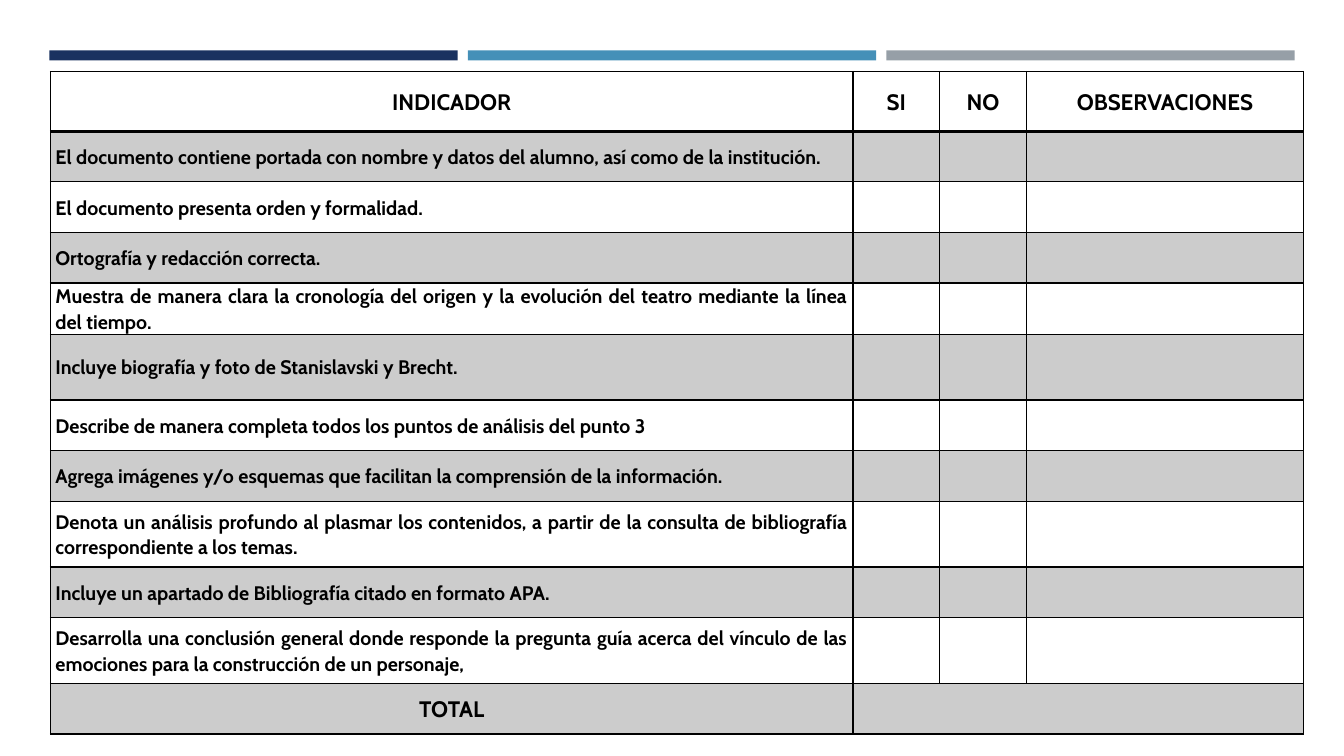
from lxml.etree import SubElement
from pptx import Presentation
from pptx.dml.color import RGBColor
from pptx.enum.shapes import MSO_SHAPE as Shape
from pptx.enum.text import MSO_ANCHOR as Anchor, PP_ALIGN as Align
from pptx.oxml import parse_xml
from pptx.oxml.ns import nsdecls, qn
from pptx.util import Inches, Pt

BLACK = RGBColor(0x00, 0x00, 0x00)
NAVY = RGBColor(0x1A, 0x32, 0x60)
BLUE = RGBColor(0x45, 0x90, 0xB8)
GRAY = RGBColor(0x96, 0x9F, 0xA7)

HEAD = ["INDICADOR", "SI", "NO", "OBSERVACIONES"]
ITEMS = [
    "El documento contiene portada con nombre y datos del alumno, así como de la institución.",
    "El documento presenta orden y formalidad.",
    "Ortografía y redacción correcta.",
    "Muestra de manera clara la cronología del origen y la evolución del teatro"
    " mediante la línea del tiempo.",
    "Incluye biografía y foto de Stanislavski y Brecht.",
    "Describe de manera completa todos los puntos de análisis del punto 3",
    "Agrega imágenes y/o esquemas que facilitan la comprensión de la información.",
    "Denota un análisis profundo al plasmar los contenidos, a partir de la consulta"
    " de bibliografía correspondiente a los temas.",
    "Incluye un apartado de Bibliografía citado en formato APA.",
    "Desarrolla una conclusión general donde responde la pregunta guía acerca"
    " del vínculo de las emociones para la construcción de un personaje,",
]
ROWS = [HEAD] + [[item, "", "", ""] for item in ITEMS] + [["TOTAL", "", "", ""]]
LAST = len(ROWS) - 1
TALL = {0: 0.59, 5: 0.65, 8: 0.65, 10: 0.65}
SHARES = [TALL.get(row, 0.5) for row in range(len(ROWS))]
COLS = [7.96, 0.86, 0.86, 2.75]
LEFT, TOP, HIGH = 0.5, 0.71, 6.57
BARS = [NAVY, BLUE, GRAY]
BAR_LEFT, BAR_TOP, BAR_WIDE, BAR_HIGH, STEP = 0.49, 0.5, 4.05, 0.1, 4.15
CELL = dict(margin_left=Inches(0.05), margin_right=Inches(0.05),
            margin_top=0, margin_bottom=0, vertical_anchor=Anchor.MIDDLE)


def style(thing, form):
    for name, value in form.items():
        setattr(thing, name, value)


def add_bars(slide):
    for num, color in enumerate(BARS):
        bar = slide.shapes.add_shape(
            Shape.RECTANGLE, Inches(BAR_LEFT + num * STEP), Inches(BAR_TOP),
            Inches(BAR_WIDE), Inches(BAR_HIGH))
        bar.shadow.inherit = False
        bar.fill.solid()
        bar.fill.fore_color.rgb = color
        bar.line.fill.background()


def shade(cell):
    """Fill the cell with black at 20% opacity."""
    cell.fill.solid()
    cell.fill.fore_color.rgb = BLACK
    color = cell._tc.tcPr.find(".//" + qn("a:srgbClr"))
    SubElement(color, qn("a:alpha"), val="20000")


def rule(cell, base):
    """Border all four sides; base is the width of the bottom one."""
    props = cell._tc.get_or_add_tcPr()
    for place, (side, width) in enumerate(zip("LRTB", (1, 1, 1, base))):
        props.insert(place, parse_xml(
            f'<a:ln{side} {nsdecls("a")} w="{Pt(width)}"><a:solidFill>'
            f'<a:srgbClr val="{BLACK}"/></a:solidFill></a:ln{side}>'))


def write(cell, text, main):
    """Set the text, larger and centred where main is true."""
    para = cell.text_frame.paragraphs[0]
    style(para, dict(alignment=Align.CENTER if main else Align.JUSTIFY, line_spacing=1.07))
    font = dict(name="Cabin", size=Pt(16 if main else 14), bold=True)
    style(para.font, font)
    if text:
        run = para.add_run()
        run.text = text
        style(run.font, font)
        run.font.color.rgb = BLACK


def add_grid(slide):
    table = slide.shapes.add_table(
        len(ROWS), len(COLS), Inches(LEFT), Inches(TOP),
        Inches(sum(COLS)), Inches(HIGH)).table
    style(table, dict(first_row=False, horz_banding=False))
    for col, wide in zip(table.columns, COLS):
        col.width = Inches(wide)
    for row, share in zip(table.rows, SHARES):
        row.height = Inches(HIGH * share / sum(SHARES))
    for row, texts in enumerate(ROWS):
        for col, text in enumerate(texts):
            cell = table.cell(row, col)
            style(cell, CELL)
            write(cell, text, row in (0, LAST))
            if row % 2:
                shade(cell)
            else:
                cell.fill.background()
            rule(cell, 1 if row else 2)
    table.cell(LAST, 1).merge(table.cell(LAST, 3))


def main():
    deck = Presentation()
    style(deck, dict(slide_width=Inches(13.33), slide_height=Inches(7.5)))
    slide = deck.slides.add_slide(deck.slide_layouts[6])
    add_bars(slide)
    add_grid(slide)
    deck.save("out.pptx")


if __name__ == "__main__":
    main()
